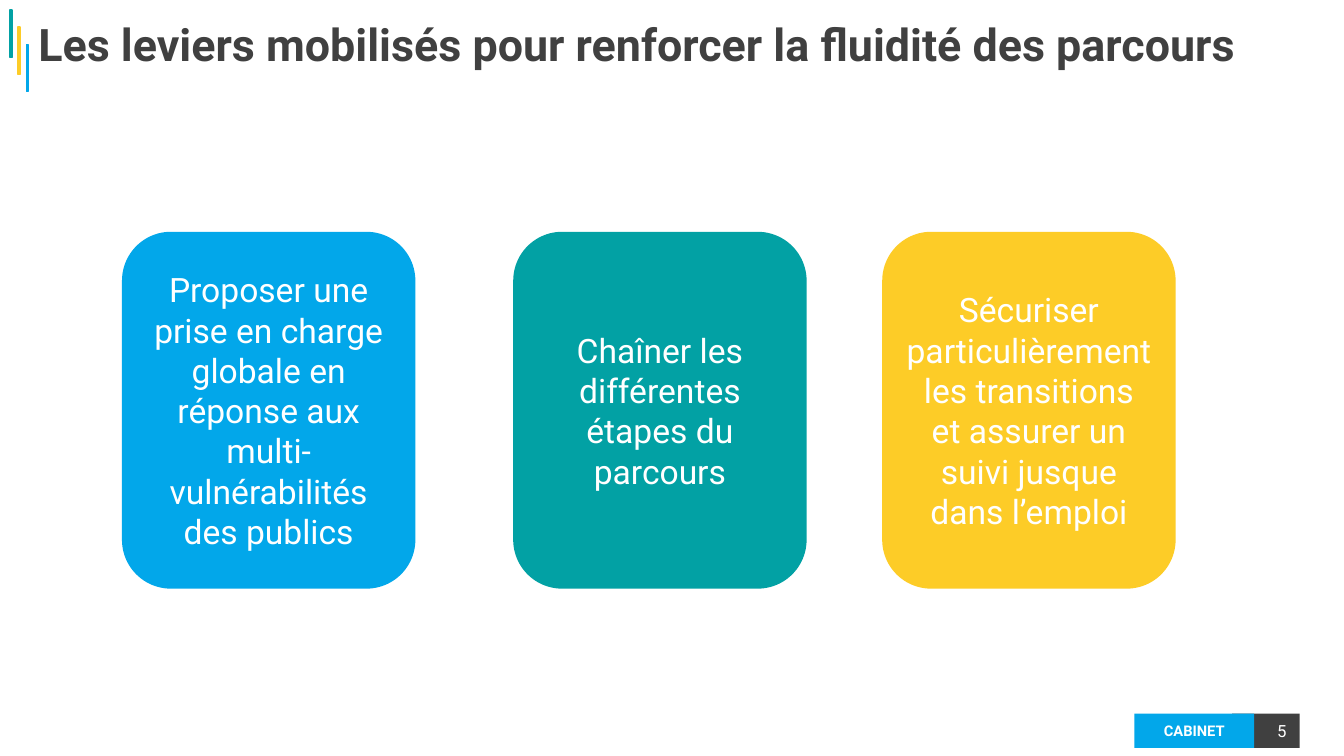
"""Build the slide on the levers that make career paths smoother."""
from dataclasses import dataclass

from lxml import etree
from pptx import Presentation
from pptx.dml.color import RGBColor
from pptx.enum.shapes import MSO_SHAPE
from pptx.enum.text import MSO_ANCHOR, MSO_AUTO_SIZE, PP_ALIGN
from pptx.oxml.ns import qn
from pptx.shapes.autoshape import Shape
from pptx.slide import Slide
from pptx.util import Inches, Pt

RECT, ROUND = MSO_SHAPE.RECTANGLE, MSO_SHAPE.ROUNDED_RECTANGLE
TOP, MIDDLE = MSO_ANCHOR.TOP, MSO_ANCHOR.MIDDLE
LEFT, CENTER, RIGHT = PP_ALIGN.LEFT, PP_ALIGN.CENTER, PP_ALIGN.RIGHT
FIXED = MSO_AUTO_SIZE.NONE

BLUE = RGBColor(0x02, 0xA7, 0xEA)
TEAL = RGBColor(0x02, 0xA1, 0xA4)
GOLD = RGBColor(0xFD, 0xCC, 0x27)
DARK = RGBColor(0x40, 0x40, 0x40)
WHITE = RGBColor(0xFF, 0xFF, 0xFF)


@dataclass(frozen=True)
class Label:
    text: str
    size: float
    bold: bool = False
    color: RGBColor = WHITE
    align: PP_ALIGN = CENTER
    anchor: MSO_ANCHOR = MIDDLE
    pad: tuple[float, float] = (0.13, 0.07)


@dataclass(frozen=True)
class Box:
    left: float
    top: float
    width: float
    height: float
    fill: RGBColor
    kind: MSO_SHAPE = RECT


CARD_PAD = (0.1, 0.05)
CARDS = (
    (1.21, BLUE, "Proposer une prise en charge globale en réponse aux "
                 "multi-vulnérabilités des publics"),
    (5.09, TEAL, "Chaîner les différentes étapes du parcours"),
    (8.75, GOLD, "Sécuriser particulièrement les transitions et assurer "
                 "un suivi jusque dans l’emploi"),
)


def write(shape: Shape, label: Label) -> None:
    frame = shape.text_frame
    pad_x, pad_y = map(Inches, label.pad)
    layout = {
        "word_wrap": True, "auto_size": FIXED,
        "vertical_anchor": label.anchor,
        "margin_left": pad_x, "margin_right": pad_x,
        "margin_top": pad_y, "margin_bottom": pad_y,
    }
    for name, value in layout.items():
        setattr(frame, name, value)
    line = frame.paragraphs[0]
    line.alignment = label.align
    run = line.add_run()
    run.text = label.text
    style = {"name": "Roboto", "size": Pt(label.size), "bold": label.bold}
    for name, value in style.items():
        setattr(run.font, name, value)
    run.font.color.rgb = label.color


def draw(slide: Slide, box: Box) -> Shape:
    place = map(Inches, (box.left, box.top, box.width, box.height))
    shape = slide.shapes.add_shape(box.kind, *place)
    shape.shadow.inherit = False
    shape.fill.solid()
    shape.fill.fore_color.rgb = box.fill
    shape.line.fill.background()
    return shape


def draw_bar(slide: Slide, index: int, color: RGBColor) -> None:
    bar = draw(slide, Box(0.1 + 0.08 * index, 0.1 + 0.17 * index,
                          0.02, 0.47, color))
    tint = bar.fill._xPr.find(qn("a:solidFill"))[0]
    etree.SubElement(tint, qn("a:alpha"), val="75000")
    bar.line.color.rgb = color
    bar.line.width = Pt(1)


def set_title(slide: Slide) -> None:
    title = slide.shapes.title
    place = {"left": 0.25, "top": 0.13, "width": 12.95, "height": 0.6}
    for name, value in place.items():
        setattr(title, name, Inches(value))
    write(title, Label(
        "Les leviers mobilisés pour renforcer la fluidité des parcours",
        32, True, DARK, LEFT))


def main() -> None:
    deck = Presentation()
    deck.slide_width, deck.slide_height = Inches(13.33), Inches(7.5)
    slide = deck.slides.add_slide(deck.slide_layouts[5])
    set_title(slide)
    page = draw(slide, Box(12.22, 7.08, 0.67, 0.34, DARK))
    write(page, Label("5", 12, align=RIGHT, anchor=TOP))
    brand = draw(slide, Box(11.25, 7.08, 1.19, 0.34, BLUE))
    write(brand, Label("CABINET", 10.5, True))
    for index, color in enumerate((TEAL, GOLD, BLUE)):
        draw_bar(slide, index, color)
    for left, color, text in CARDS:
        card = draw(slide, Box(left, 2.3, 2.91, 3.54, color, ROUND))
        write(card, Label(text, 24, pad=CARD_PAD))
    deck.save("out.pptx")


if __name__ == "__main__":
    main()
